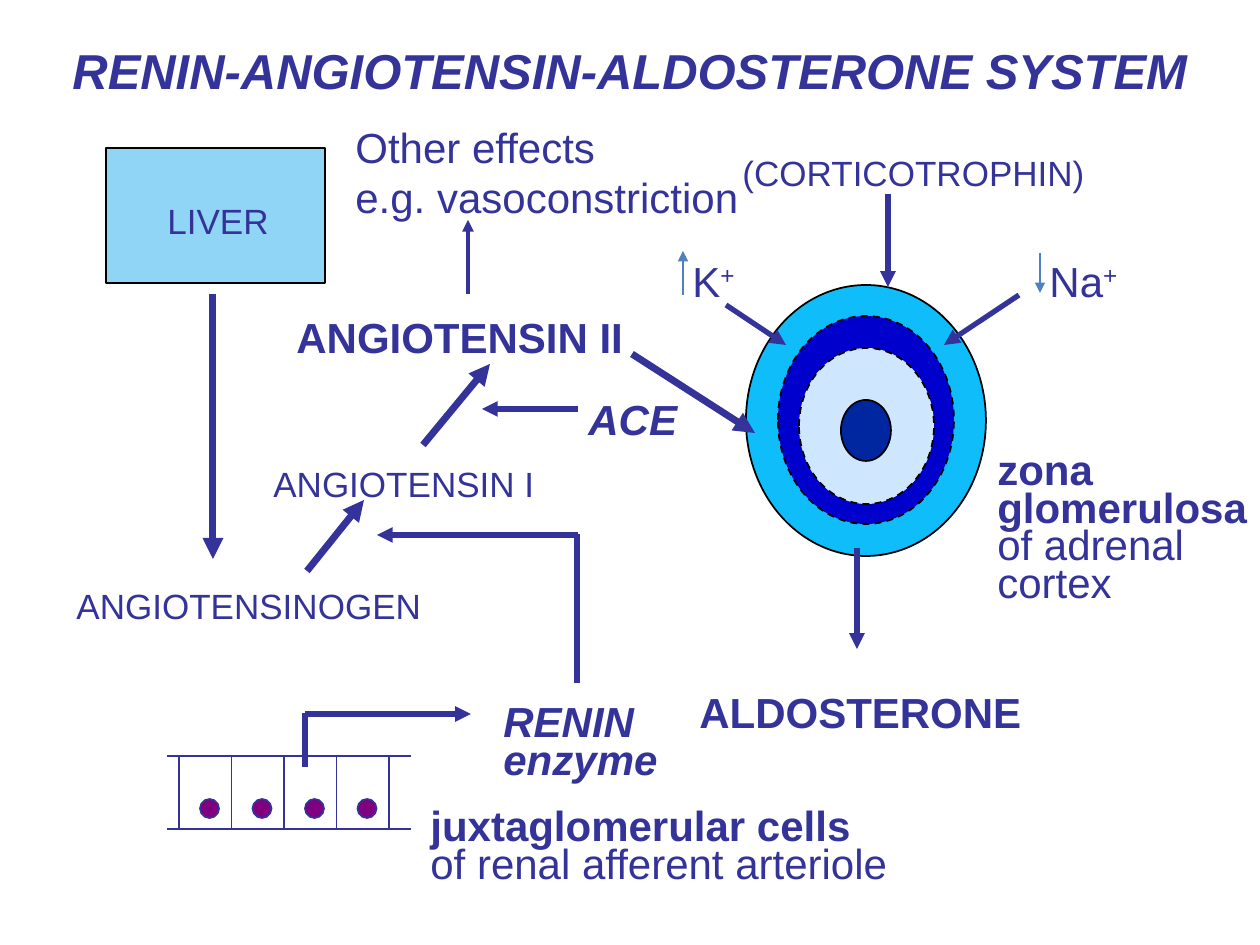
from lxml import etree
from pptx import Presentation
from pptx.dml.color import RGBColor
from pptx.enum.dml import MSO_LINE
from pptx.enum.shapes import MSO_CONNECTOR, MSO_SHAPE
from pptx.enum.text import MSO_AUTO_SIZE
from pptx.oxml.ns import qn
from pptx.util import Emu, Inches, Pt

STRAIGHT = MSO_CONNECTOR.STRAIGHT
OVAL = MSO_SHAPE.OVAL
RECTANGLE = MSO_SHAPE.RECTANGLE
DASH = MSO_LINE.DASH
FIT_SHAPE = MSO_AUTO_SIZE.SHAPE_TO_FIT_TEXT

PX_PER_INCH = 126
FONT = "Arial"
COLORS = {
    "ink": "333399",
    "ion": "4F81BD",
    "outline": "000000",
    "liver": "90D4F6",
    "glomerulosa": "0FBDFB",
    "fasciculata": "0000CC",
    "reticularis": "CEE6FE",
    "medulla": "00279F",
    "nucleus": "800080",
}


def px(value):
    return Emu(round(value * 914400 / PX_PER_INCH))


def rgb(name):
    return RGBColor.from_string(COLORS[name])


def add_text(slide, box, *paragraphs, size=24, bold=False, italic=False, spacing=None):
    """Each paragraph is a list of (text, bold, superscript) tuples or a plain string."""
    frame = slide.shapes.add_textbox(*map(px, box)).text_frame
    frame.word_wrap = False
    frame.auto_size = FIT_SHAPE
    frame.margin_left = frame.margin_right = Inches(0.1)
    frame.margin_top = frame.margin_bottom = Inches(0.05)
    for index, content in enumerate(paragraphs):
        paragraph = frame.paragraphs[0] if index == 0 else frame.add_paragraph()
        if spacing:
            paragraph.line_spacing = spacing
        runs = [(content, bold, False)] if isinstance(content, str) else content
        for text, run_bold, superscript in runs:
            run = paragraph.add_run()
            run.text = text
            run.font.name = FONT
            run.font.size = Pt(size)
            run.font.bold = run_bold
            run.font.italic = italic
            run.font.color.rgb = rgb("ink")
            if superscript:
                run._r.get_or_add_rPr().set("baseline", "30000")


def add_filled(slide, kind, box, fill, outline="outline", dash=None):
    shape = slide.shapes.add_shape(kind, *map(px, box))
    shape.shadow.inherit = False
    shape.fill.solid()
    shape.fill.fore_color.rgb = rgb(fill)
    shape.line.color.rgb = rgb(outline)
    shape.line.width = Pt(1)
    if dash:
        shape.line.dash_style = dash


def add_line(slide, ends, width=3, color="ink", arrow=True):
    line = slide.shapes.add_connector(STRAIGHT, *map(px, ends))
    line.line.color.rgb = rgb(color)
    line.line.width = Pt(width)
    if arrow:
        etree.SubElement(line.line._get_or_add_ln(), qn("a:tailEnd"), type="triangle")
    etree.SubElement(line._element.spPr, qn("a:effectLst"))


def add_adrenal_gland(slide):
    layers = [
        ((746, 285, 240, 271), "glomerulosa", None),
        ((778, 316, 176, 208), "fasciculata", DASH),
        ((799, 348, 135, 156), "reticularis", DASH),
        ((841, 400, 50, 61), "medulla", None),
    ]
    for box, fill, dash in layers:
        add_filled(slide, OVAL, box, fill, dash=dash)


def add_arteriole_cells(slide):
    left, top, bottom, pitch, cells = 179, 756, 829, 52.5, 4
    for y in (top, bottom):
        add_line(slide, (411, y, 167, y), width=1, arrow=False)
    for wall in range(cells + 1):
        x = left + wall * pitch
        add_line(slide, (x, top, x, bottom), width=1, arrow=False)
    for cell in range(cells):
        add_filled(slide, OVAL, (left + 21 + cell * pitch, 799, 19, 19), "nucleus", "ink")


def add_labels(slide):
    add_text(slide, (60, 34, 1152, 72), "RENIN-ANGIOTENSIN-ALDOSTERONE SYSTEM",
             size=28, bold=True, italic=True)
    for box, substance in [
        ((730, 145, 370, 54), "(CORTICOTROPHIN)"),
        ((155, 193, 127, 54), "LIVER"),
        ((64, 578, 373, 54), "ANGIOTENSINOGEN"),
        ((261, 456, 289, 54), "ANGIOTENSIN I"),
    ]:
        add_text(slide, box, substance, size=20)
    add_text(slide, (284, 305, 355, 63), "ANGIOTENSIN II", bold=True)
    add_text(slide, (687, 680, 350, 63), "ALDOSTERONE", bold=True)
    add_text(slide, (576, 387, 115, 63), "ACE", bold=True, italic=True)
    add_text(slide, (491, 701, 181, 88), "RENIN", "enzyme",
             bold=True, italic=True, spacing=0.75)
    add_text(slide, (343, 115, 412, 115), "Other effects", "e.g. vasoconstriction")
    add_text(slide, (985, 449, 277, 165), [("zona", True, False)],
             [("glomerulosa", True, False)], "of adrenal", "cortex", spacing=0.75)
    add_text(slide, (418, 805, 486, 88), [("juxtaglomerular cells", True, False)],
             "of renal afferent arteriole", spacing=0.75)
    for box, ion in [((680, 249, 71, 63), "K"), ((1037, 249, 96, 63), "Na")]:
        add_text(slide, box, [(ion, False, False), ("+", False, True)])


def add_pathways(slide):
    for ends, width in [
        ((888, 194, 888, 287), 3),     # corticotrophin to gland
        ((1019, 295, 944, 345), 3),    # sodium to gland
        ((726, 305, 786, 345), 3),     # potassium to gland
        ((213, 294, 213, 559), 4),     # liver to angiotensinogen
        ((307, 571, 364, 500), 4),     # angiotensinogen to angiotensin I
        ((423, 445, 490, 364), 4),     # angiotensin I to angiotensin II
        ((578, 409, 482, 409), 3),     # ACE
        ((632, 354, 755, 433), 4),     # angiotensin II to gland
        ((468, 294, 468, 220), 2.25),  # angiotensin II to other effects
        ((857, 548, 857, 649), 3),     # gland to aldosterone
        ((578, 535, 377, 535), 3),     # renin
        ((305, 714, 471, 714), 3),     # cells to renin
    ]:
        add_line(slide, ends, width)
    for stem in [(577, 683, 577, 534), (305, 767, 305, 713)]:
        add_line(slide, stem, arrow=False)
    for ion_change in [(683, 295, 683, 251), (1040, 253, 1040, 293)]:
        add_line(slide, ion_change, width=1.5, color="ion")


def main():
    deck = Presentation()
    deck.slide_width, deck.slide_height = px(1260), px(945)
    slide = deck.slides.add_slide(deck.slide_layouts[6])
    add_adrenal_gland(slide)
    add_filled(slide, RECTANGLE, (106, 148, 219, 135), "liver")
    add_arteriole_cells(slide)
    add_labels(slide)
    add_pathways(slide)
    deck.save("out.pptx")


if __name__ == "__main__":
    main()
